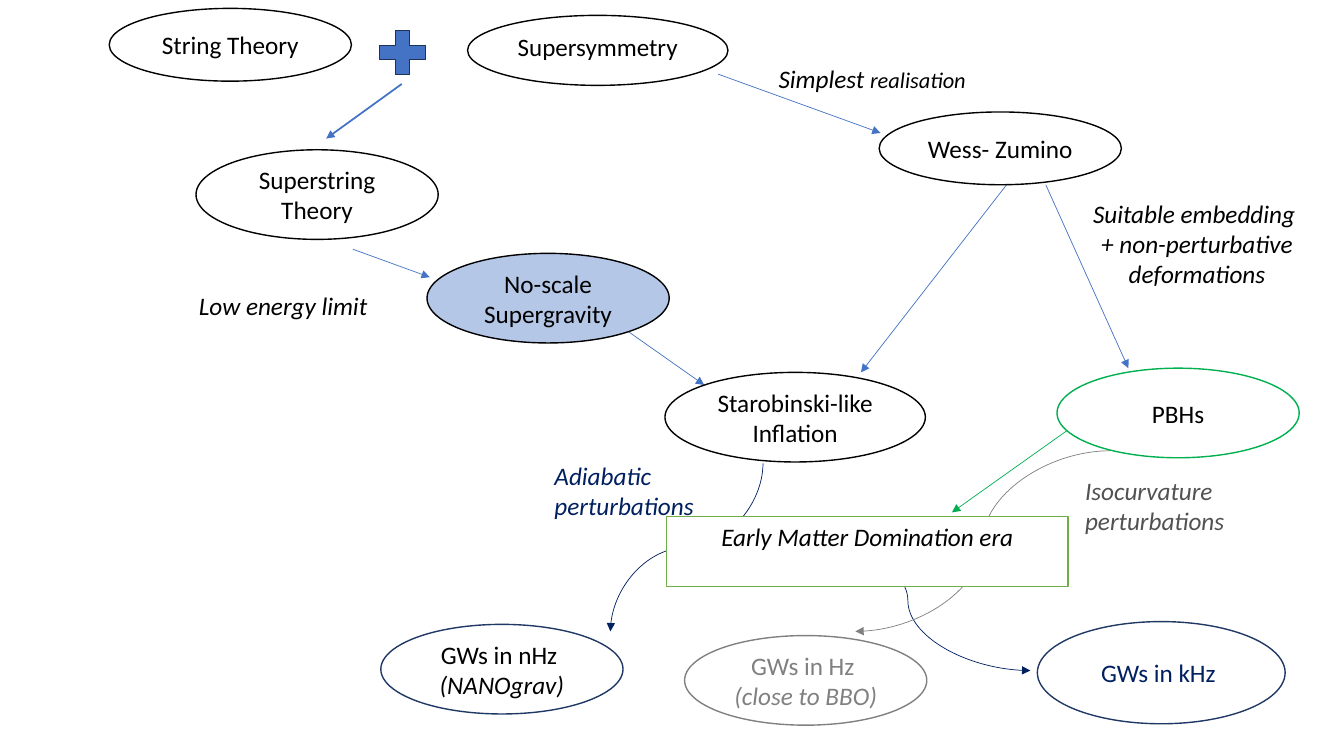
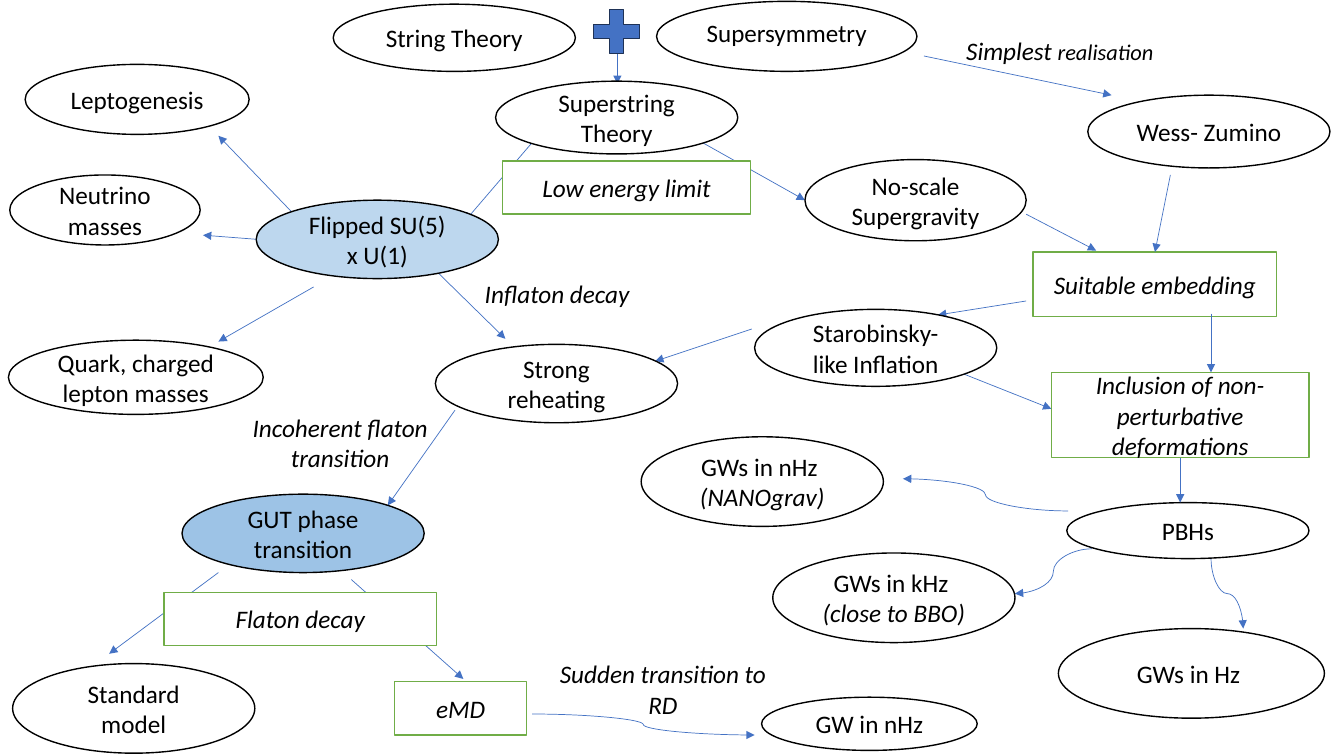
"""Build two flow diagrams leading from string theory to gravitational waves."""
from lxml.etree import SubElement
from pptx import Presentation
from pptx.dml.color import RGBColor
from pptx.enum.shapes import MSO_CONNECTOR, MSO_SHAPE
from pptx.enum.text import MSO_ANCHOR, PP_ALIGN
from pptx.oxml.ns import qn
from pptx.util import Pt

COLORS = {
    "black": "000000", "white": "FFFFFF", "blue": "4472C4", "edge": "1E3256",
    "navy": "002060", "slate": "203864", "gray": "808080", "dark gray": "525252",
    "green": "00B050", "leaf": "70AD47", "periwinkle": "B4C7E7",
    "pale": "BDD7EE", "sky": "9DC3E6",
}
FONT = "Calibri"
LEFT, CENTER = PP_ALIGN.LEFT, PP_ALIGN.CENTER
OVAL, RECT = MSO_SHAPE.OVAL, MSO_SHAPE.RECTANGLE

STYLES = {
    "theory": (OVAL, "white", "black", {}),
    "tight": (OVAL, "white", "black", {"size": 17.9, "spacing": 0.7, "before": 10}),
    "gravity": (OVAL, "periwinkle", "black", {}),
    "flipped": (OVAL, "pale", "black", {}),
    "phase": (OVAL, "sky", "black", {}),
    "holes": (OVAL, "white", "green", {}),
    "nano": (OVAL, "white", "slate", {}),
    "hertz": (OVAL, "white", "gray", {"color": "gray"}),
    "kilo": (OVAL, "white", "slate", {"color": "navy"}),
    "process": (RECT, "white", "leaf", {"italic": True}),
    "era": (RECT, "white", "leaf", {"italic": True, "anchor": MSO_ANCHOR.TOP}),
    "plus": (MSO_SHAPE.MATH_PLUS, "blue", "edge", {}),
}

SIMPLEST = [[("Simplest ", {}), ("realisation", {"size": 16})]]
NANO = ["GWs in nHz ", [("(NANOgrav)", {"italic": True})]]
CLOSE = [("(close to BBO)", {"italic": True})]

OVERVIEW = {
    "labels": [
        (SIMPLEST, (549, 42, 173, 29), LEFT, "black"),
        (["Low energy limit"], (135, 204, 140, 29), LEFT, "black"),
        (["Suitable embedding ", "+ non-perturbative deformations"],
         (760, 138, 190, 73), CENTER, "black"),
        (["Adiabatic perturbations"], (389, 325, 144, 73), LEFT, "navy"),
        (["Isocurvature perturbations"], (768, 336, 144, 73), LEFT, "dark gray"),
    ],
    "arrows": [
        ((287, 60), (233, 99), {"width": 1.25}),
        ((513, 53), (629, 95), {}),
        ((252, 178), (307, 198), {}),
        ((719, 132), (615, 266), {}),
        ((449, 237), (503, 275), {}),
        ((747, 132), (806, 263), {}),
        ((763, 307), (680, 366), {"color": "green"}),
        ((545, 331), (436, 451), {"color": "navy", "curve": "down"}),
        ((561, 379), (736, 479), {"color": "navy", "curve": "across"}),
        ((793, 322), (611, 451), {"color": "gray", "curve": "across"}),
    ],
    "nodes": [
        ("theory", ["Wess- Zumino"], (628, 80, 173, 52)),
        ("tight", ["Supersymmetry"], (334, 11, 186, 50)),
        ("theory", ["String Theory"], (78, 6, 173, 52)),
        ("theory", ["Superstring Theory"], (140, 107, 173, 64)),
        ("theory", ["Starobinski-like Inflation"], (475, 266, 186, 64)),
        ("gravity", ["No-scale Supergravity"], (305, 181, 173, 64)),
        ("plus", [], (265, 16, 45, 43)),
        ("holes", ["PBHs"], (755, 263, 173, 64)),
        ("nano", NANO, (272, 446, 173, 64)),
        ("hertz", ["GWs in Hz ", CLOSE], (489, 454, 173, 64)),
        ("kilo", ["GWs in kHz "], (741, 444, 177, 73)),
        ("era", ["Early Matter Domination era"], (476, 369, 287, 50)),
    ],
    "joined": [],
}

DETAIL = {
    "labels": [
        (SIMPLEST, (683, 22, 173, 29), LEFT, "black"),
        (["Inflaton decay"], (323, 195, 150, 29), CENTER, "black"),
        (["Incoherent flaton transition"], (168, 291, 150, 51), CENTER, "black"),
        (["Sudden transition to RD"], (384, 467, 179, 51), CENTER, "black"),
    ],
    "arrows": [
        ((441, 38), (441, 60), {"width": 1.25}),
        ((660, 40), (794, 68), {}),
        ((502, 102), (575, 143), {}),
        ((733, 153), (783, 179), {}),
        ((380, 102), (332, 158), {}),
        ((208, 151), (156, 97), {}),
        ((224, 205), (156, 244), {}),
        ((184, 171), (145, 168), {}),
        ((733, 215), (670, 225), {}),
        ((312, 194), (361, 242), {}),
        ((537, 235), (468, 258), {}),
        ((325, 293), (277, 361), {}),
        ((251, 414), (331, 485), {}),
        ((156, 409), (78, 467), {}),
        ((688, 267), (751, 292), {}),
        ((780, 392), (725, 424), {"curve": "across"}),
        ((865, 399), (888, 449), {"curve": "down"}),
        ((380, 510), (539, 525), {"curve": "across"}),
        ((763, 365), (645, 342), {"curve": "across"}),
    ],
    "nodes": [
        ("theory", ["Wess- Zumino"], (777, 68, 173, 52)),
        ("tight", ["Supersymmetry"], (469, 1, 186, 50)),
        ("theory", ["String Theory"], (238, 3, 173, 48)),
        ("theory", ["Superstring Theory"], (354, 58, 173, 52)),
        ("theory", ["Starobinsky-like Inflation"], (539, 221, 173, 55)),
        ("theory", ["No-scale Supergravity"], (575, 114, 158, 58)),
        ("plus", [], (418, 1, 45, 43)),
        ("theory", ["PBHs"], (762, 359, 173, 40)),
        ("theory", NANO, (458, 312, 173, 64)),
        ("theory", ["GWs in kHz ", CLOSE], (552, 395, 173, 64)),
        ("theory", ["GWs in Hz "], (756, 449, 190, 64)),
        ("flipped", ["Flipped SU(5) x U(1)"], (183, 143, 173, 56)),
        ("theory", ["Leptogenesis"], (18, 46, 160, 50)),
        ("theory", ["Neutrino masses"], (7, 125, 136, 50)),
        ("theory", ["Quark, charged lepton masses"], (6, 243, 182, 53)),
        ("phase", ["GUT phase transition"], (130, 353, 173, 56)),
        ("theory", ["Strong reheating"], (311, 246, 173, 56)),
        ("theory", ["Standard model"], (9, 474, 173, 64)),
        ("theory", ["GW in nHz"], (544, 498, 154, 38)),
        ("process", ["Low energy limit"], (359, 115, 177, 38)),
        ("process", ["Suitable embedding"], (738, 180, 174, 46)),
        ("process", ["Flaton decay"], (117, 423, 195, 38)),
        ("process", ["eMD"], (282, 487, 94, 38)),
        ("process", ["Inclusion of non-perturbative deformations"],
         (751, 266, 184, 61)),
    ],
    "joined": [
        ((836, 125), (825, 180), {"end": ("Suitable embedding", 0)}),
        ((865, 224), (865, 266), {}),
        ((843, 327), (843, 359),
         {"begin": ("Inclusion of non-perturbative deformations", 2)}),
    ],
}


def rgb(name):
    return RGBColor.from_string(COLORS[name])


def write(box, paragraphs, *, size=18, color="black", italic=False, align=CENTER,
          anchor=MSO_ANCHOR.MIDDLE, spacing=None, before=0):
    frame = box.text_frame
    frame.word_wrap = True
    frame.vertical_anchor = anchor
    for index, runs in enumerate(paragraphs):
        para = frame.add_paragraph() if index else frame.paragraphs[0]
        para.alignment = align
        para.line_spacing = spacing
        para.space_before = Pt(before)
        for text, changes in [(runs, {})] if isinstance(runs, str) else runs:
            span = para.add_run()
            span.text = text
            span.font.name = FONT
            span.font.size = Pt(changes.get("size", size))
            span.font.italic = changes.get("italic", italic)
            span.font.color.rgb = rgb(color)


def add_label(page, paragraphs, place, align, color):
    box = page.shapes.add_textbox(*map(Pt, place))
    write(box, paragraphs, color=color, italic=True, align=align,
          anchor=MSO_ANCHOR.TOP)


def add_node(page, style, paragraphs, place):
    preset, fill, edge, text_format = STYLES[style]
    box = page.shapes.add_shape(preset, *map(Pt, place))
    box.shadow.inherit = False
    box.fill.solid()
    box.fill.fore_color.rgb = rgb(fill)
    box.line.color.rgb = rgb(edge)
    box.line.width = Pt(1)
    write(box, paragraphs, **text_format)
    return box


def add_arrow(page, start, finish, nodes, *, color="blue", width=0.5, curve=None,
              begin=None, end=None):
    turn = 0
    if curve == "down":
        (left, top), (right, bottom) = start, finish
        middle_x, middle_y = (left + right) / 2, (top + bottom) / 2
        sign = 1 if right < left else -1
        across, down = sign * (bottom - top) / 2, sign * (right - left) / 2
        start = (middle_x - across, middle_y + down)
        finish = (middle_x + across, middle_y - down)
        turn = 90 if sign == 1 else 270
    kind = MSO_CONNECTOR.CURVE if curve else MSO_CONNECTOR.STRAIGHT
    arrow = page.shapes.add_connector(kind, *map(Pt, start + finish))
    if begin:
        arrow.begin_connect(nodes[begin[0]], begin[1])
    if end:
        arrow.end_connect(nodes[end[0]], end[1])
    arrow.line.color.rgb = rgb(color)
    arrow.line.width = Pt(width)
    properties = arrow.element.spPr
    if turn:
        properties.find(qn("a:xfrm")).set("rot", str(turn * 60000))
    SubElement(properties.find(qn("a:ln")), qn("a:tailEnd"), type="triangle")
    SubElement(properties, qn("a:effectLst"))


def add_diagram(deck, diagram):
    page = deck.slides.add_slide(deck.slide_layouts[6])
    for label in diagram["labels"]:
        add_label(page, *label)
    nodes = {}
    for start, finish, options in diagram["arrows"]:
        add_arrow(page, start, finish, nodes, **options)
    for style, paragraphs, place in diagram["nodes"]:
        box = add_node(page, style, paragraphs, place)
        nodes[box.text_frame.text] = box
    for start, finish, options in diagram["joined"]:
        add_arrow(page, start, finish, nodes, **options)


def main():
    deck = Presentation()
    deck.slide_width, deck.slide_height = Pt(960), Pt(540)
    for diagram in (OVERVIEW, DETAIL):
        add_diagram(deck, diagram)
    deck.save("out.pptx")


if __name__ == "__main__":
    main()
